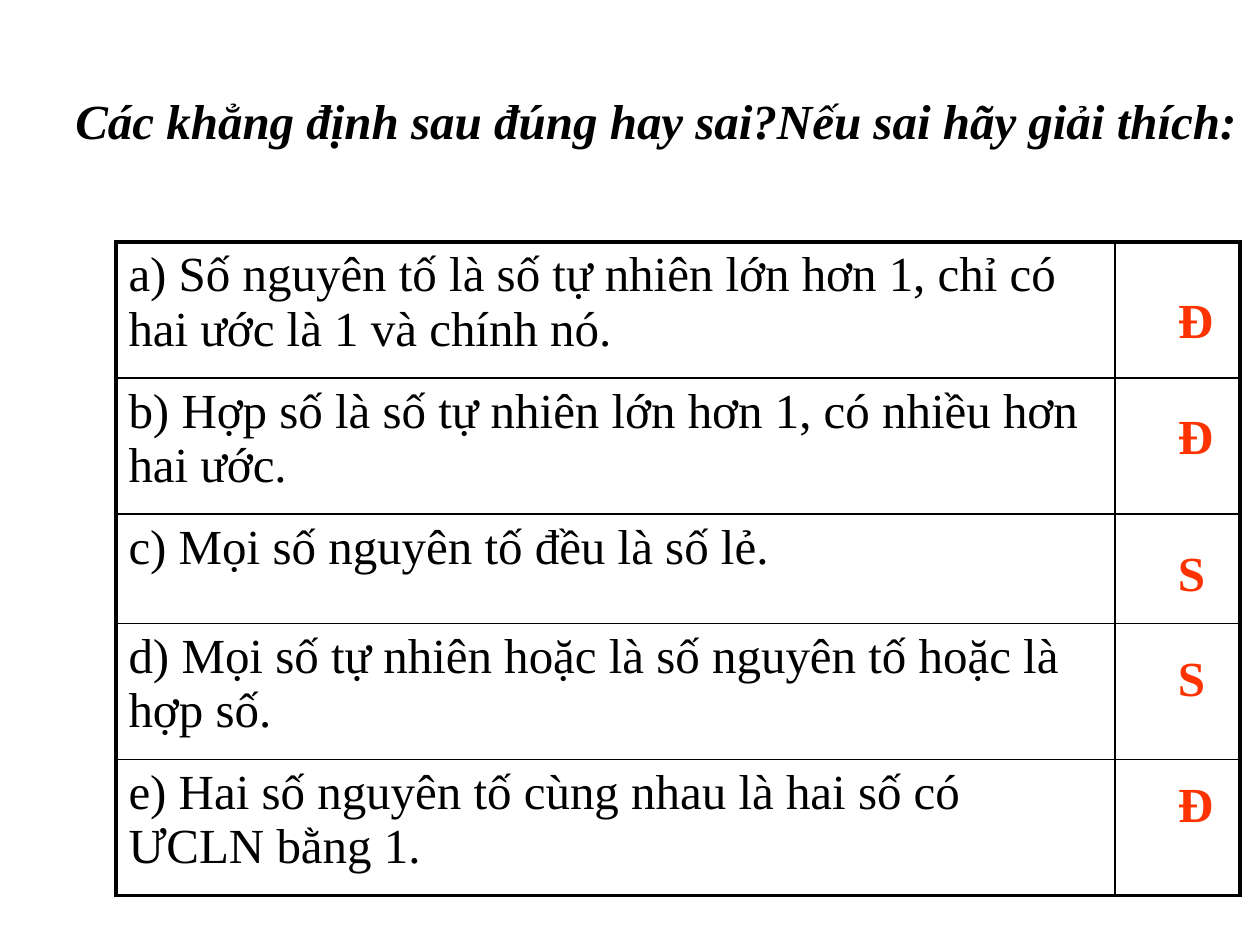
from pptx import Presentation
from pptx.dml.color import RGBColor
from pptx.oxml import parse_xml
from pptx.oxml.ns import nsdecls
from pptx.util import Inches, Pt

BLACK, RED, WHITE = "000000", "FF3300", "FFFFFF"
ROWS = [
    ("a) Số nguyên tố là số tự nhiên lớn hơn 1, chỉ có hai ước là 1 và chính nó.", 1.08, "Đ", 2.25),
    ("b) Hợp số là số tự nhiên lớn hơn 1, có nhiều hơn hai ước.", 1.08, "Đ", 3.17),
    ("c) Mọi số nguyên tố đều là số lẻ.", 0.87, "S", 4.26),
    ("d) Mọi số tự nhiên hoặc là số nguyên tố hoặc là hợp số.", 1.08, "S", 5.09),
    ("e) Hai số nguyên tố cùng nhau là hai số có ƯCLN bằng 1.", 1.08, "Đ", 6.09),
]


def color(code):
    return RGBColor.from_string(code)


class Quiz:
    def __init__(self, slide):
        self.slide = slide
        self.style = {"name": "Times New Roman", "size": Pt(28)}

    def put(self, frame, text, tint, gap, **extra):
        para = frame.paragraphs[0]
        para.space_before = Pt(gap)
        run = para.add_run()
        run.text = text
        for key, value in {**self.style, **extra}.items():
            setattr(run.font, key, value)
        run.font.color.rgb = color(tint)

    def label(self, box, text, tint, **extra):
        frame = self.slide.shapes.add_textbox(*map(Inches, box)).text_frame
        frame.word_wrap = True
        self.put(frame, text, tint, 2.8, bold=True, **extra)

    def border(self, cell, sides):
        props = cell._tc.get_or_add_tcPr()
        for spot, (side, width) in enumerate(sides.items()):
            props.insert(spot, parse_xml(
                f'<a:ln{side} {nsdecls("a")} w="{Pt(width)}"><a:solidFill>'
                f'<a:srgbClr val="{BLACK}"/></a:solidFill></a:ln{side}>'))

    def table(self, left, top, cols, rows):
        tall = sum(row[1] for row in rows)
        box = map(Inches, (left, top, sum(cols), tall))
        grid = self.slide.shapes.add_table(len(rows), len(cols), *box).table
        grid.first_row = grid.horz_banding = False
        for col, wide in zip(grid.columns, cols):
            col.width = Inches(wide)
        last, end = len(rows) - 1, len(cols) - 1
        for i, (text, high, *rest) in enumerate(rows):
            grid.rows[i].height = Inches(high)
            for j in range(len(cols)):
                cell = grid.cell(i, j)
                cell.fill.solid()
                cell.fill.fore_color.rgb = color(WHITE)
                edges = {"L": j == 0, "R": j == end, "T": i == 0, "B": i == last}
                self.border(cell, {k: 2.25 if v else 1 for k, v in edges.items()})
            self.put(grid.cell(i, 0).text_frame, text, BLACK, 0)


def main():
    deck = Presentation()
    deck.slide_width, deck.slide_height = Inches(10), Inches(7.5)
    quiz = Quiz(deck.slides.add_slide(deck.slide_layouts[6]))
    quiz.table(0.92, 1.92, (7.93, 0.99), ROWS)
    for text, high, mark, top in ROWS:
        quiz.label((9.25, top, 0.42, 0.57), mark, RED)
    title = "Các khẳng định sau đúng hay sai?Nếu sai hãy giải thích:"
    quiz.label((0.5, 0.67, 9.5, 0.57), title, BLACK, italic=True)
    deck.save("out.pptx")


if __name__ == "__main__":
    main()
